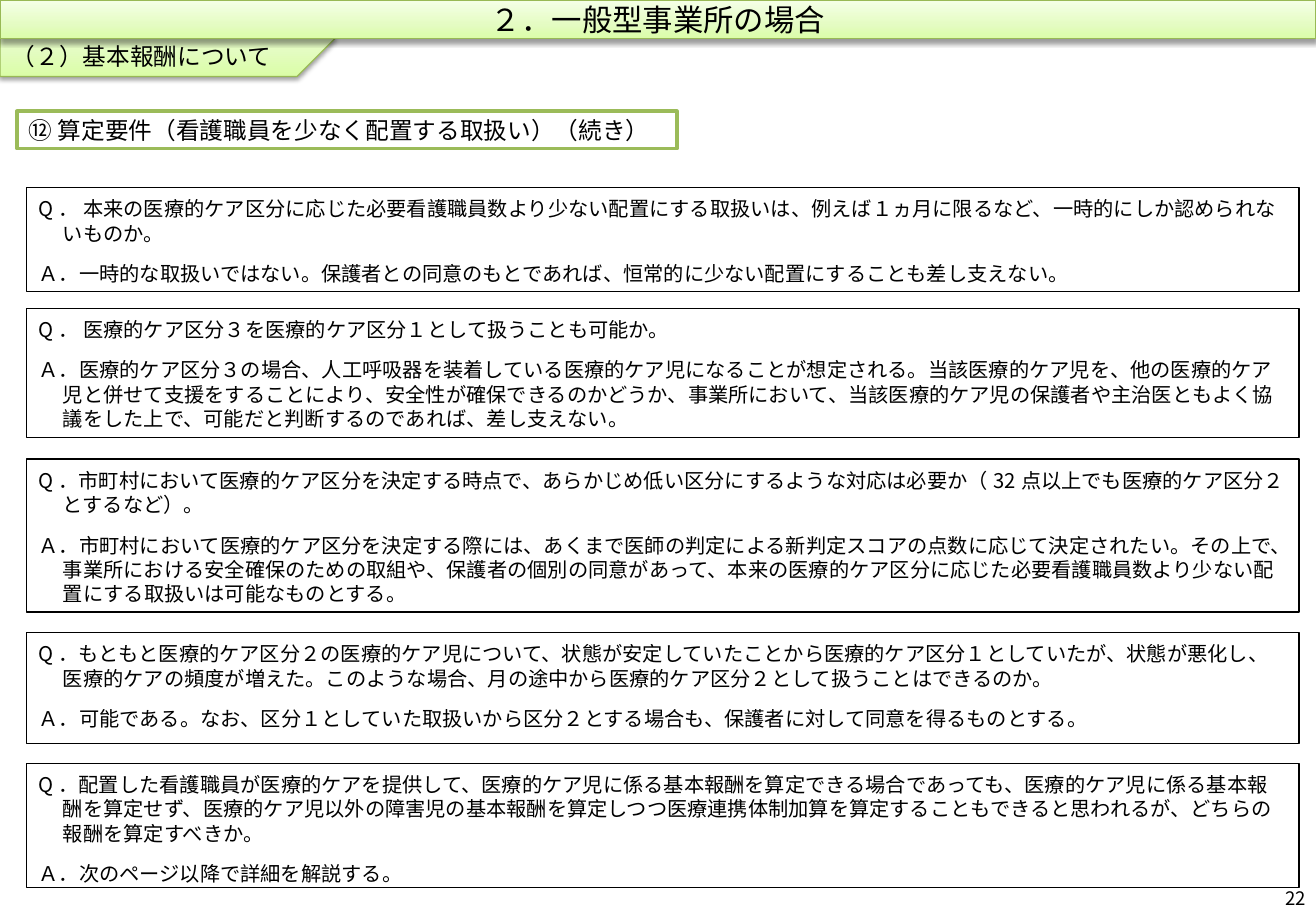
from copy import deepcopy
from dataclasses import dataclass

from lxml import etree
from pptx import Presentation, util as u
from pptx.dml.color import RGBColor
from pptx.enum import shapes, text
from pptx.oxml.ns import qn


@dataclass(frozen=True)
class Theme:
    font: str = "Noto Sans CJK JP"
    ink: str = "000000"
    paper: str = "FFFFFF"
    accent: str = "9BBB59"
    band_line: str = "98B955"
    band_stops: tuple = ((0, "DAFDA7"), (0.35, "E4FCC2"), (1, "F5FFE7"))
    title_size: int = 18
    heading_size: int = 14
    body_size: int = 12
    number_size: int = 11
    number_leading: int = 12
    body_leading: float = 14.5
    answer_gap: float = 9.5


theme = Theme()
rgb = RGBColor.from_string
left, center, right = text.PP_ALIGN.LEFT, text.PP_ALIGN.CENTER, text.PP_ALIGN.RIGHT
top, middle, bottom = text.MSO_ANCHOR.TOP, text.MSO_ANCHOR.MIDDLE, text.MSO_ANCHOR.BOTTOM

deck = Presentation()
deck.slide_width, deck.slide_height = u.Inches(10.83), u.Inches(7.5)
slide = deck.slides.add_slide(deck.slide_layouts[5])


def place(x, y, width, height):
    """Turn percentages of the slide into left, top, width and height."""
    across, down = deck.slide_width / 100, deck.slide_height / 100
    return int(x * across), int(y * down), int(width * across), int(height * down)


def write(shape, lines, size, align=left, anchor=middle):
    frame = shape.text_frame
    frame.word_wrap = True
    frame.auto_size = text.MSO_AUTO_SIZE.NONE
    frame.vertical_anchor = anchor
    frame.text = "\n".join(lines)
    for paragraph in frame.paragraphs:
        paragraph.alignment = align
        font = paragraph.font
        font.size = u.Pt(size)
        font.color.rgb = rgb(theme.ink)
        font.name = theme.font
        latin = paragraph._p.pPr.find(qn("a:defRPr")).find(qn("a:latin"))
        east_asian = etree.Element(qn("a:ea"), typeface=theme.font)
        latin.addnext(east_asian)


# Green bands: the section tag lies behind the title
section = slide.shapes.add_shape(shapes.MSO_SHAPE.PENTAGON, *place(0, 0, 25.48, 8.4))
write(section, ["（２）基本報酬について"], theme.heading_size, anchor=bottom)

title = slide.shapes.title
title.left, title.top, title.width, title.height = place(0, 0, 100, 4.25)
write(title, ["２．一般型事業所の場合"], theme.title_size, align=center)
section._element.addnext(title._element)

for band in (section, title):
    band.line.color.rgb = rgb(theme.band_line)
    band.line.width = u.Pt(0.75)
    band.fill.gradient()
    band.fill.gradient_angle = 90
    stop_list = band._element.spPr.find(qn("a:gradFill")).find(qn("a:gsLst"))
    stop_list.insert(1, deepcopy(stop_list[0]))
    for stop, (position, color) in zip(band.fill.gradient_stops, theme.band_stops):
        stop.position = position
        stop.color.rgb = rgb(color)
    band.shadow.inherit = False
    effects = band._element.spPr.find(qn("a:effectLst"))
    shadow = etree.SubElement(
        effects, qn("a:outerShdw"), blurRad=str(u.Pt(3.1)), dist=str(u.Pt(1.6)),
        dir="5400000", rotWithShape="0")
    shade = etree.SubElement(shadow, qn("a:srgbClr"), val=theme.ink)
    etree.SubElement(shade, qn("a:alpha"), val="38000")

heading = slide.shapes.add_shape(
    shapes.MSO_SHAPE.PENTAGON, *place(1.29, 12.2, 50.14, 4.13))
heading.adjustments[0] = 0
heading.shadow.inherit = False
heading.fill.solid()
heading.fill.fore_color.rgb = rgb(theme.paper)
heading.line.color.rgb = rgb(theme.accent)
heading.line.width = u.Pt(2)
write(heading, ["⑫ 算定要件（看護職員を少なく配置する取扱い）（続き）"], theme.heading_size)

# Each entry: top and height in percent, question, answer
questions = [
    (20.6, 11.4,
     "Q． 本来の医療的ケア区分に応じた必要看護職員数より少ない配置にする取扱いは、"
     "例えば１ヵ月に限るなど、一時的にしか認められないものか。",
     "Ａ．一時的な取扱いではない。保護者との同意のもとであれば、"
     "恒常的に少ない配置にすることも差し支えない。"),
    (33.87, 14.13,
     "Q． 医療的ケア区分３を医療的ケア区分１として扱うことも可能か。",
     "Ａ．医療的ケア区分３の場合、人工呼吸器を装着している医療的ケア児になることが想定される。"
     "当該医療的ケア児を、他の医療的ケア児と併せて支援をすることにより、"
     "安全性が確保できるのかどうか、事業所において、当該医療的ケア児の保護者や主治医とも"
     "よく協議をした上で、可能だと判断するのであれば、差し支えない。"),
    (50.4, 16.8,
     "Q．市町村において医療的ケア区分を決定する時点で、あらかじめ低い区分にするような対応は必要か"
     "（32点以上でも医療的ケア区分２とするなど）。",
     "Ａ．市町村において医療的ケア区分を決定する際には、"
     "あくまで医師の判定による新判定スコアの点数に応じて決定されたい。その上で、"
     "事業所における安全確保のための取組や、保護者の個別の同意があって、"
     "本来の医療的ケア区分に応じた必要看護職員数より少ない配置にする取扱いは可能なものとする。"),
    (69.47, 12.13,
     "Q．もともと医療的ケア区分２の医療的ケア児について、状態が安定していたことから"
     "医療的ケア区分１としていたが、状態が悪化し、医療的ケアの頻度が増えた。"
     "このような場合、月の途中から医療的ケア区分２として扱うことはできるのか。",
     "Ａ．可能である。なお、区分１としていた取扱いから区分２とする場合も、"
     "保護者に対して同意を得るものとする。"),
    (83.8, 13.6,
     "Q．配置した看護職員が医療的ケアを提供して、医療的ケア児に係る基本報酬を算定できる場合であっても、"
     "医療的ケア児に係る基本報酬を算定せず、医療的ケア児以外の障害児の基本報酬を算定しつつ"
     "医療連携体制加算を算定することもできると思われるが、どちらの報酬を算定すべきか。",
     "Ａ．次のページ以降で詳細を解説する。"),
]
for y, height, question, answer in questions:
    entry = slide.shapes.add_shape(
        shapes.MSO_SHAPE.RECTANGLE, *place(2.03, y, 96.68, height))
    entry.shadow.inherit = False
    entry.fill.background()
    entry.line.color.rgb = rgb(theme.ink)
    entry.line.width = u.Pt(0.75)
    write(entry, [question, answer], theme.body_size, anchor=top)
    frame = entry.text_frame
    frame.margin_top = frame.margin_bottom = u.Inches(0.07)
    for paragraph in frame.paragraphs:
        paragraph.line_spacing = u.Pt(theme.body_leading)
        indents = paragraph._p.get_or_add_pPr()
        indents.set("marL", str(u.Inches(0.2)))
        indents.set("indent", str(-u.Inches(0.2)))
    frame.paragraphs[1].space_before = u.Pt(theme.answer_gap)

# The page number has the strip below the last entry to itself
page_number = slide.shapes.add_textbox(*place(76.82, 97.5, 22.4, 2.5))
write(page_number, ["22"], theme.number_size, align=right)
frame = page_number.text_frame
frame.margin_top = frame.margin_bottom = frame.margin_right = 0
frame.paragraphs[0].line_spacing = u.Pt(theme.number_leading)

deck.save("out.pptx")
